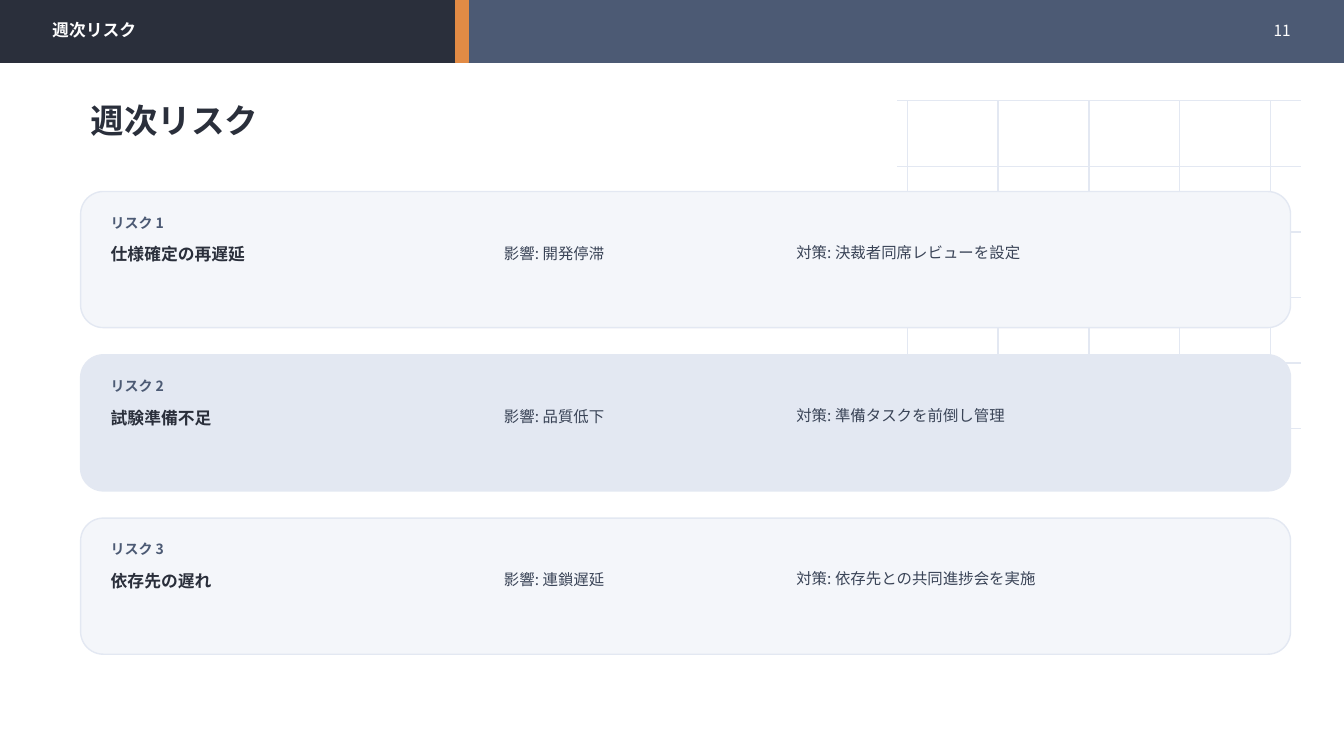
import pptx
import pptx.dml.color
import pptx.enum.shapes
import pptx.enum.text
import pptx.oxml.ns
import pptx.util
from lxml import etree

Inches = pptx.util.Inches
RGBColor = pptx.dml.color.RGBColor
Shape = pptx.enum.shapes.MSO_SHAPE
Align = pptx.enum.text.PP_ALIGN
Anchor = pptx.enum.text.MSO_ANCHOR
qn = pptx.oxml.ns.qn

WHITE = RGBColor(0xFF, 0xFF, 0xFF)
DARK = RGBColor(0x2A, 0x2F, 0x3B)
SLATE = RGBColor(0x4C, 0x5A, 0x74)
BODY = RGBColor(0x3A, 0x44, 0x57)
ORANGE = RGBColor(0xE2, 0x8B, 0x45)
MIST = RGBColor(0xE3, 0xE8, 0xF2)
PALE = RGBColor(0xF4, 0xF6, 0xFA)

RISKS = [
    ("仕様確定の再遅延", "開発停滞", "決裁者同席レビューを設定"),
    ("試験準備不足", "品質低下", "準備タスクを前倒し管理"),
    ("依存先の遅れ", "連鎖遅延", "依存先との共同進捗会を実施"),
]


class Deck:
    font = "Noto Sans CJK JP"
    width = pptx.util.Pt(1)

    def __init__(self, slide):
        self.slide = slide

    def line(self, x1, y1, x2, y2):
        line = self.slide.shapes.add_connector(
            pptx.enum.shapes.MSO_CONNECTOR.STRAIGHT,
            Inches(x1), Inches(y1), Inches(x2), Inches(y2))
        line.line.color.rgb = MIST
        line.line.width = self.width
        props = line._element.find(qn("p:spPr"))
        etree.SubElement(props, qn("a:effectLst"))

    def box(self, kind, x, y, w, h, fill, edge):
        box = self.slide.shapes.add_shape(
            kind, Inches(x), Inches(y), Inches(w), Inches(h))
        box.shadow.inherit = False
        box.fill.solid()
        box.fill.fore_color.rgb = fill
        box.line.color.rgb = edge
        box.line.width = self.width

    def text(self, x, y, w, h, words, size, color, bold=False,
             align=Align.LEFT, anchor=Anchor.MIDDLE):
        frame = self.slide.shapes.add_textbox(
            Inches(x), Inches(y), Inches(w), Inches(h)).text_frame
        frame.word_wrap = True
        frame.vertical_anchor = anchor
        frame.text = words
        para = frame.paragraphs[0]
        para.alignment = align
        font = para.runs[0].font
        font.size = pptx.util.Pt(size)
        font.bold = bold
        font.color.rgb = color
        font.name = self.font
        # East Asian typeface
        asian = etree.SubElement(font._element, qn("a:ea"))
        asian.set("typeface", self.font)


def main():
    prs = pptx.Presentation()
    prs.slide_width = Inches(13.33)
    prs.slide_height = Inches(7.5)
    deck = Deck(prs.slides.add_slide(prs.slide_layouts[6]))

    # Background grid
    for row in range(6):
        y = 1 + 0.65 * row
        deck.line(8.9, y, 12.9, y)
    for col in range(5):
        x = 9 + 0.9 * col
        deck.line(x, 1, x, 4.2)

    # Header band and title
    for x, w, color in [(0, 13.33, SLATE), (0, 4.6, DARK),
                        (4.52, 0.12, ORANGE)]:
        deck.box(Shape.RECTANGLE, x, 0, w, 0.62, color, color)
    deck.text(0.42, 0.17, 8.8, 0.26, "週次リスク", 12, WHITE, bold=True)
    deck.text(12.15, 0.17, 0.75, 0.26, "11", 11, WHITE, align=Align.RIGHT)
    deck.text(0.8, 0.95, 11.4, 0.48, "週次リスク", 24, DARK, bold=True)

    # Risk cards
    for i, (name, impact, action) in enumerate(RISKS):
        top = 1.9 + 1.62 * i
        mid = top + 0.46
        fill = MIST if i % 2 else PALE
        deck.box(Shape.ROUNDED_RECTANGLE, 0.8, top, 12, 1.35, fill, MIST)
        deck.text(1, top + 0.2, 1.2, 0.22, f"リスク {i + 1}", 10, SLATE,
                  bold=True)
        deck.text(1, mid, 3.7, 0.32, name, 12, DARK, bold=True)
        deck.text(4.9, mid, 2.8, 0.3, f"影響: {impact}", 11, BODY)
        deck.text(7.8, mid, 4.8, 0.58, f"対策: {action}", 11, BODY,
                  anchor=Anchor.TOP)

    prs.save("out.pptx")


if __name__ == "__main__":
    main()
